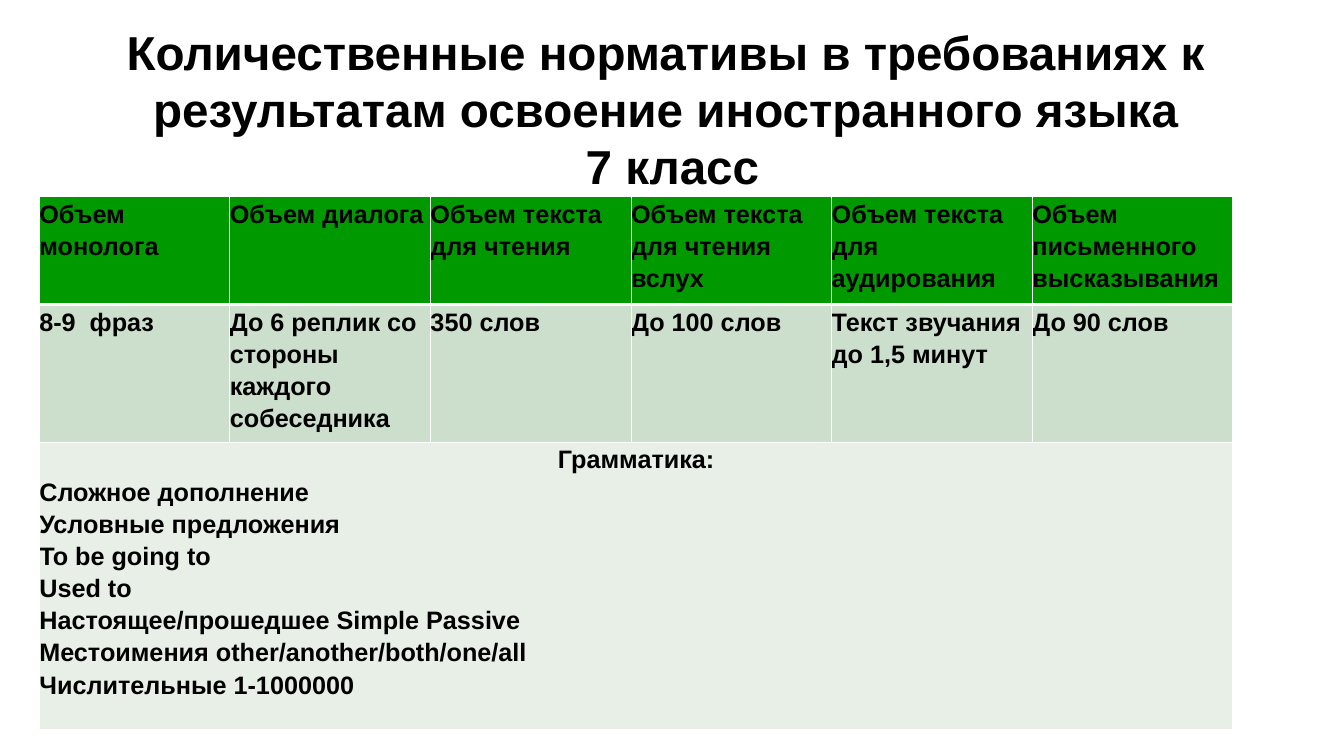
from pptx import Presentation
from pptx import util as u
from pptx.dml.color import RGBColor
from pptx.enum import text
from pptx.oxml import parse_xml
from pptx.oxml.ns import nsdecls

TITLE = ["Количественные нормативы в требованиях к ",
         "результатам освоение иностранного языка ",
         "7 класс"]
HEADS = ["Объем монолога", "Объем диалога", "Объем текста для чтения",
         "Объем текста для чтения вслух", "Объем текста для аудирования",
         "Объем письменного высказывания"]
NORMS = ["8-9  фраз", "До 6 реплик со стороны каждого собеседника",
         "350 слов", "До 100 слов", "Текст звучания до 1,5 минут",
         "До 90 слов"]
TOPICS = ["Сложное дополнение", "Условные предложения", "To be going to",
          "Used to", "Настоящее/прошедшее Simple Passive",
          "Местоимения other/another/both/one/all", "Числительные 1-1000000"]
WIDTHS = [1.89] + [1.99] * 5
HEIGHTS = [1.07, 1.07, 2.85]
ALIGN = text.PP_ALIGN


def color(code):
    return RGBColor.from_string(code)


def add_run(para, words, size):
    run = para.add_run()
    run.text = words
    run.font.name = "Arial"
    run.font.size = u.Pt(size)
    run.font.bold = True
    run.font.color.rgb = color("000000")


def add_title(slide, box):
    frame = slide.shapes.add_textbox(*map(u.Inches, box)).text_frame
    frame.word_wrap = True
    frame.vertical_anchor = text.MSO_ANCHOR.MIDDLE
    para = frame.paragraphs[0]
    para.alignment = ALIGN.CENTER
    for i, line in enumerate(TITLE):
        if i:
            para.add_line_break()
        add_run(para, line, 34)


def set_edges(cell, base):
    """Draw white cell borders, with the bottom one base points wide."""
    props = cell._tc.get_or_add_tcPr()
    edges = [("lnL", 1), ("lnR", 1), ("lnT", 1), ("lnB", base)]
    for i, (tag, width) in enumerate(edges):
        props.insert(i, parse_xml(
            f'<a:{tag} {nsdecls("a")} w="{u.Pt(width)}"><a:solidFill>'
            f'<a:srgbClr val="FFFFFF"/></a:solidFill></a:{tag}>'))


def fill_cell(cell, lines, fill, base=1):
    """Style a cell and write its (words, alignment) lines."""
    cell.margin_left = cell.margin_right = 0
    cell.margin_top = cell.margin_bottom = 0
    cell.fill.solid()
    cell.fill.fore_color.rgb = color(fill)
    set_edges(cell, base)
    frame = cell.text_frame
    for i, (words, align) in enumerate(lines):
        para = frame.add_paragraph() if i else frame.paragraphs[0]
        para.alignment = align
        para.line_spacing = 1.14
        add_run(para, words, 18)


def add_norms(slide, left, top):
    box = map(u.Inches, (left, top, sum(WIDTHS), sum(HEIGHTS)))
    table = slide.shapes.add_table(len(HEIGHTS), len(WIDTHS), *box).table
    for col, width in zip(table.columns, WIDTHS):
        col.width = u.Inches(width)
    for row, height in zip(table.rows, HEIGHTS):
        row.height = u.Inches(height)
    for i, (head, norm) in enumerate(zip(HEADS, NORMS)):
        fill_cell(table.cell(0, i), [(head, ALIGN.LEFT)], "009900", 3)
        fill_cell(table.cell(1, i), [(norm, ALIGN.LEFT)], "CCDECC")
    wide = table.cell(2, 0)
    wide.merge(table.cell(2, len(WIDTHS) - 1))
    lines = [("Грамматика:", ALIGN.CENTER)]
    lines += [(topic, ALIGN.JUSTIFY) for topic in TOPICS]
    fill_cell(wide, lines, "E7EFE7")


def main():
    deck = Presentation()
    deck.slide_width = u.Inches(13.33)
    deck.slide_height = u.Inches(7.5)
    slide = deck.slides.add_slide(deck.slide_layouts[6])
    add_title(slide, (0.67, 0.21, 12, 1.74))
    add_norms(slide, 0.39, 1.95)
    deck.save("out.pptx")


if __name__ == "__main__":
    main()
